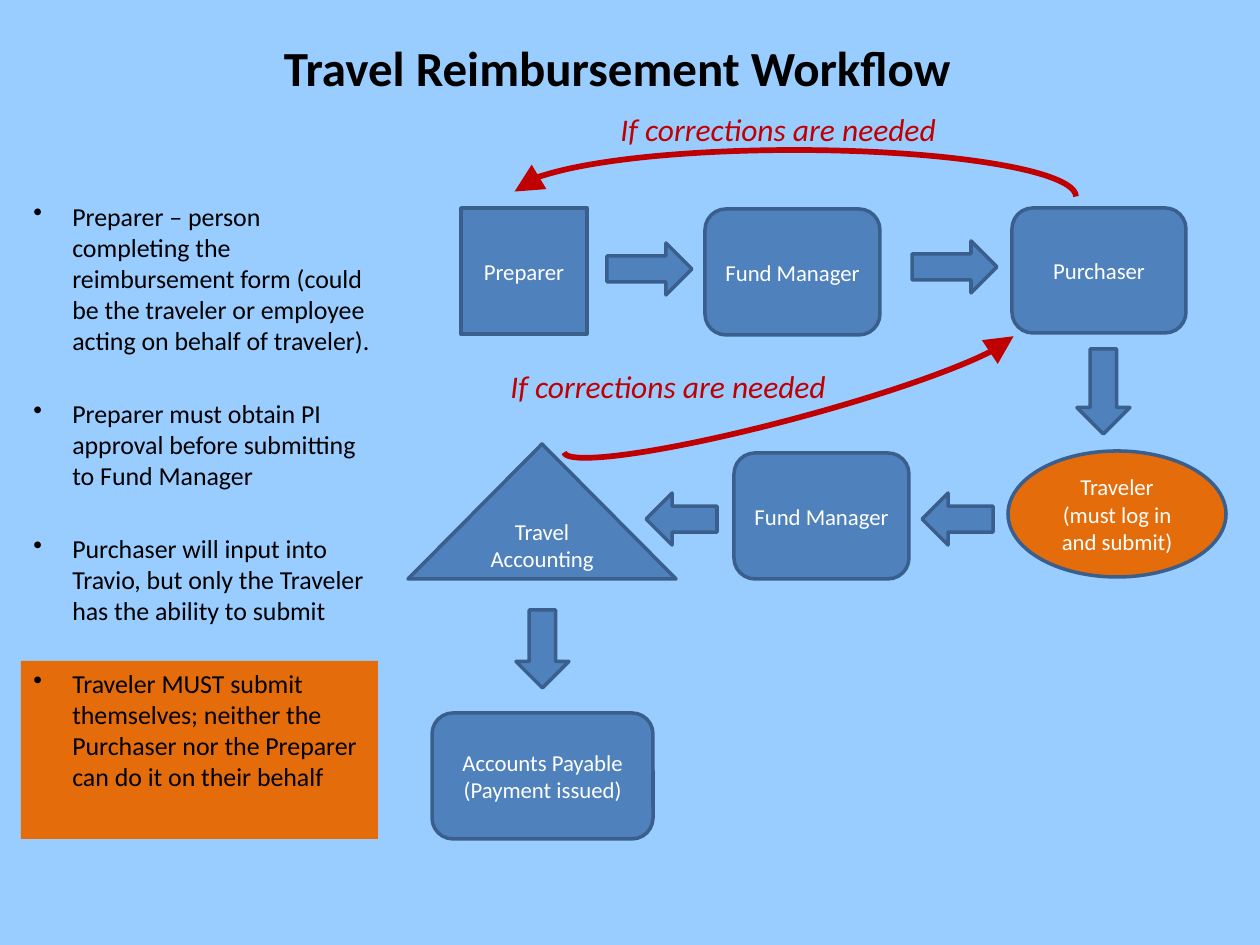
import pptx
import pptx.dml.color
import pptx.enum.shapes
import pptx.enum.text
import pptx.util
from lxml import etree
from pptx.oxml.ns import qn

RGBColor = pptx.dml.color.RGBColor
SHAPE = pptx.enum.shapes.MSO_SHAPE
ALIGN = pptx.enum.text.PP_ALIGN
ANCHOR = pptx.enum.text.MSO_ANCHOR
Pt = pptx.util.Pt

SKY = RGBColor(0x99, 0xCC, 0xFF)
BLUE = RGBColor(0x4F, 0x81, 0xBD)
NAVY = RGBColor(0x3A, 0x5F, 0x8C)
ORANGE = RGBColor(0xE4, 0x6C, 0x0A)
RED = RGBColor(0xC0, 0x00, 0x00)
BLACK = RGBColor(0, 0, 0)
WHITE = RGBColor(0xFF, 0xFF, 0xFF)

EMU_PER_PX = 914400 / 126
BULLET_INDENT = 39


def px(length):
    return round(length * EMU_PER_PX)


class WorkflowSlide:
    font_name = "Calibri"

    def __init__(self, slide):
        self.slide = slide
        slide.background.fill.solid()
        slide.background.fill.fore_color.rgb = SKY

    def set_text(self, frame, text, size, color, align, bold=False, italic=False):
        """Fill a text frame, one paragraph for each line of text."""
        frame.word_wrap = True
        frame.text = text
        for paragraph in frame.paragraphs:
            paragraph.alignment = align
            font = paragraph.font
            font.name, font.size = self.font_name, Pt(size)
            font.bold, font.italic = bold, italic
            font.color.rgb = color

    def shape(self, kind, box, fill=BLUE, outline=NAVY):
        shape = self.slide.shapes.add_shape(kind, *map(px, box))
        shape.shadow.inherit = False
        shape.fill.solid()
        shape.fill.fore_color.rgb = fill
        if outline is None:
            shape.line.fill.background()
        else:
            shape.line.color.rgb = outline
            shape.line.width = Pt(2)
        return shape

    def step(self, kind, box, label, fill=BLUE):
        step = self.shape(kind, box, fill)
        step.text_frame.vertical_anchor = ANCHOR.MIDDLE
        self.set_text(step.text_frame, label, 13, WHITE, ALIGN.CENTER)

    def block_arrow(self, kind, box, rotation=0):
        self.shape(kind, box).rotation = rotation

    def text(self, box, text, size, color, align=ALIGN.LEFT, **emphasis):
        frame = self.slide.shapes.add_textbox(*map(px, box)).text_frame
        self.set_text(frame, text, size, color, align, **emphasis)
        return frame

    def bullets(self, box, items, size, gap):
        frame = self.text(box, "\n".join(items), size, BLACK)
        for index, paragraph in enumerate(frame.paragraphs):
            paragraph.space_before = Pt(gap if index else 0)
            properties = paragraph._p.get_or_add_pPr()
            properties.set("marL", str(px(BULLET_INDENT)))
            properties.set("indent", str(-px(BULLET_INDENT)))
            bullet = etree.Element(qn("a:buChar"), char="•")
            properties.insert_element_before(bullet, "a:tabLst", "a:defRPr", "a:extLst")

    def return_arc(self, box, rotation=0):
        """Curved arrow that sends the form back for corrections."""
        arc = self.slide.shapes.add_shape(SHAPE.ARC, *map(px, box))
        arc.shadow.inherit = False
        arc.adjustments[0] = 108.61
        arc.adjustments[1] = 0
        arc.rotation = rotation
        arc.fill.background()
        arc.line.color.rgb = RED
        arc.line.width = Pt(3.25)
        outline = arc._element.spPr.find(qn("a:ln"))
        etree.SubElement(outline, qn("a:headEnd"), type="triangle", w="lg", len="lg")


def main():
    deck = pptx.Presentation()
    deck.slide_width, deck.slide_height = px(1260), px(945)
    page = WorkflowSlide(deck.slides.add_slide(deck.slide_layouts[6]))

    page.shape(SHAPE.RECTANGLE, (21, 661, 357, 178), ORANGE, outline=None)
    page.bullets((21, 194, 365, 646), [
        "Preparer – person completing the reimbursement form (could be the "
        "traveler or employee acting on behalf of traveler).",
        "Preparer must obtain PI approval before submitting to Fund Manager",
        "Purchaser will input into Travio, but only the Traveler has the "
        "ability to submit",
        "Traveler MUST submit themselves; neither the Purchaser nor the "
        "Preparer can do it on their behalf",
    ], size=14.8, gap=24)
    page.text((42, 31, 1150, 72), "Travel Reimbursement Workflow", 28, BLACK,
              ALIGN.CENTER, bold=True)

    for kind, box, label in [
        (SHAPE.RECTANGLE, (461, 208, 126, 126), "Preparer"),
        (SHAPE.ROUNDED_RECTANGLE, (705, 209, 175, 126), "Fund Manager"),
        (SHAPE.ROUNDED_RECTANGLE, (1012, 208, 174, 125), "Purchaser"),
        (SHAPE.ROUNDED_RECTANGLE, (734, 453, 175, 126), "Fund Manager"),
        (SHAPE.ISOSCELES_TRIANGLE, (408, 444, 268, 135), "Travel Accounting"),
        (SHAPE.ROUNDED_RECTANGLE, (432, 713, 221, 126),
         "Accounts Payable\n(Payment issued)"),
    ]:
        page.step(kind, box, label)
    page.step(SHAPE.OVAL, (1008, 451, 218, 126),
              "Traveler\v(must log in and submit)", ORANGE)

    for left, top in [(607, 243), (912, 241)]:
        page.block_arrow(SHAPE.RIGHT_ARROW, (left, top, 85, 52))
    for left in (922, 646):
        page.block_arrow(SHAPE.RIGHT_ARROW, (left, 493, 71, 52), rotation=180)
    for left, top, height in [(1077, 349, 85), (516, 610, 78)]:
        page.block_arrow(SHAPE.DOWN_ARROW, (left, top, 53, height))

    page.return_arc((513, 150, 563, 93))
    page.return_arc((556, 365, 467, 54), rotation=165)
    for left, top in [(608, 104), (498, 361)]:
        page.text((left, top, 420, 51), "If corrections are needed", 18, RED,
                  italic=True)

    deck.save("out.pptx")


if __name__ == "__main__":
    main()
